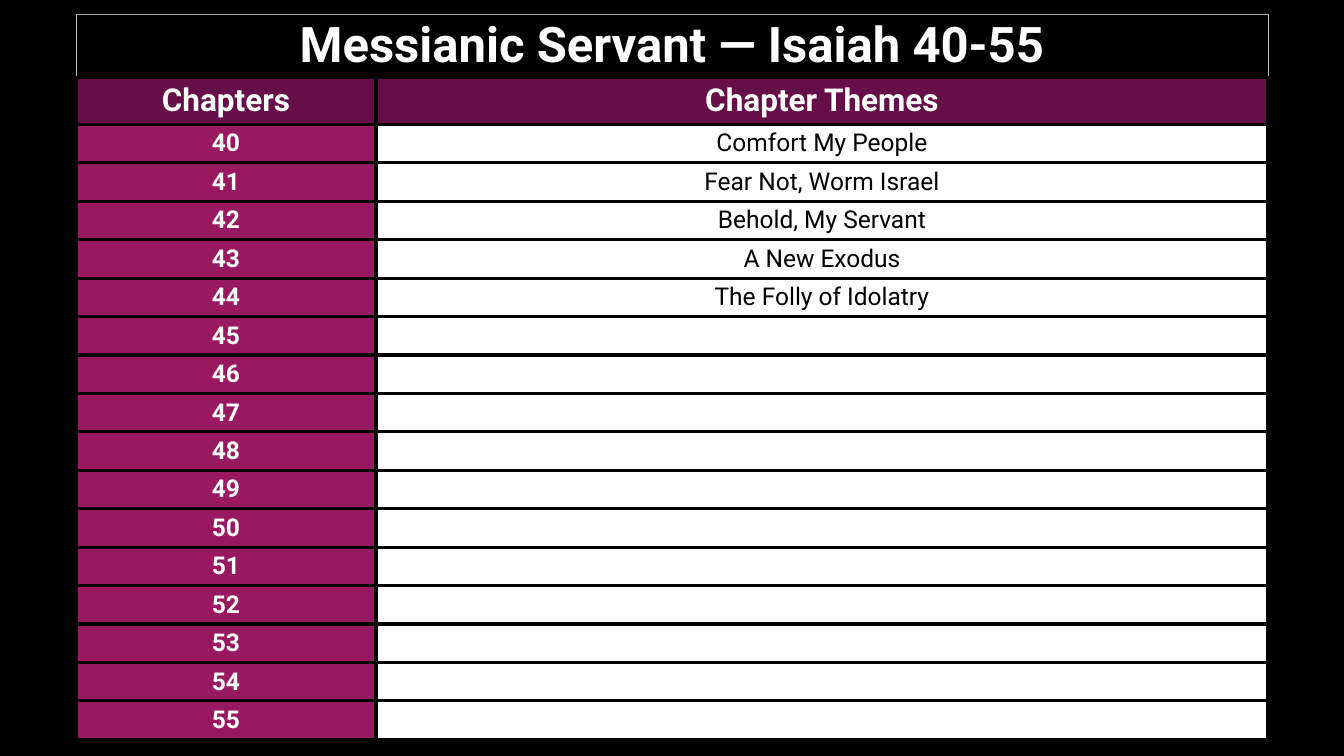
from lxml import etree
from pptx import Presentation
from pptx import util as u
from pptx.dml.color import RGBColor
from pptx.enum import text
from pptx.oxml.ns import qn

PX = 18143  # EMU in one px
FONT = "Roboto"
BLACK = RGBColor(0x00, 0x00, 0x00)
WHITE = RGBColor(0xFF, 0xFF, 0xFF)
PLUM = RGBColor(0x65, 0x0E, 0x48)
MAGENTA = RGBColor(0x98, 0x19, 0x5F)
SILVER = RGBColor(0xC0, 0xC0, 0xC0)
GREY = RGBColor(0xA6, 0xAA, 0xA9)

TITLE = "Messianic Servant — Isaiah 40-55"
HEADINGS = ["Chapters", "Chapter Themes"]
CHAPTERS = range(40, 56)
THEMES = {
    40: "Comfort My People",
    41: "Fear Not, Worm Israel",
    42: "Behold, My Servant",
    43: "A New Exodus",
    44: "The Folly of Idolatry",
}

GRID = {side: (BLACK, 5) for side in "LRTB"}
TITLE_EDGES = {"L": (SILVER, 1), "R": (SILVER, 1), "T": (GREY, 1), "B": (BLACK, 5)}


def set_borders(cell, edges):
    """Draw the cell's edges; call before the fill is set."""
    properties = cell._tc.get_or_add_tcPr()
    for side, (color, points) in edges.items():
        line = etree.SubElement(properties, qn(f"a:ln{side}"), w=str(u.Pt(points)))
        fill = etree.SubElement(line, qn("a:solidFill"))
        etree.SubElement(fill, qn("a:srgbClr"), val=str(color))


def format_cell(cell, fill, edges=GRID):
    set_borders(cell, edges)
    if fill is None:
        cell.fill.background()
    else:
        cell.fill.solid()
        cell.fill.fore_color.rgb = fill
    cell.vertical_anchor = text.MSO_ANCHOR.MIDDLE
    cell.margin_left = cell.margin_right = 3 * PX
    cell.margin_top = cell.margin_bottom = 3 * PX


def write_cell(cell, words, size, color=WHITE, bold=True):
    paragraph = cell.text_frame.paragraphs[0]
    paragraph.alignment = text.PP_ALIGN.CENTER
    run = paragraph.add_run()
    run.text = words
    run.font.name = FONT
    run.font.size = u.Pt(size)
    run.font.bold = bold
    run.font.color.rgb = color


def add_chapter_table(slide, left, top, width, height):
    title_height, heading_height, chapter_width = 63, 47, 300
    body_height = height - title_height - heading_height
    frame = slide.shapes.add_table(
        len(CHAPTERS) + 2, 2, left * PX, top * PX, width * PX, height * PX)
    table = frame.table
    table.first_row = table.horz_banding = False
    table.columns[0].width = chapter_width * PX
    table.columns[1].width = (width - chapter_width) * PX
    for row in table.rows:
        row.height = body_height * PX // len(CHAPTERS)
    table.rows[0].height = title_height * PX
    table.rows[1].height = heading_height * PX

    table.cell(0, 0).merge(table.cell(0, 1))
    for column in range(2):
        format_cell(table.cell(0, column), None, TITLE_EDGES)
    write_cell(table.cell(0, 0), TITLE, 70)

    for column, heading in enumerate(HEADINGS):
        format_cell(table.cell(1, column), PLUM)
        write_cell(table.cell(1, column), heading, 45)

    for row, chapter in enumerate(CHAPTERS, start=2):
        chapter_cell, theme_cell = table.cell(row, 0), table.cell(row, 1)
        format_cell(chapter_cell, MAGENTA)
        write_cell(chapter_cell, str(chapter), 35)
        format_cell(theme_cell, WHITE)
        if chapter in THEMES:
            write_cell(theme_cell, THEMES[chapter], 35, BLACK, bold=False)


def main():
    presentation = Presentation()
    presentation.slide_width = 1344 * PX
    presentation.slide_height = 756 * PX
    slide = presentation.slides.add_slide(presentation.slide_layouts[6])
    slide.background.fill.solid()
    slide.background.fill.fore_color.rgb = BLACK
    add_chapter_table(slide, 76, 14, 1192, 725)
    presentation.save("out.pptx")


if __name__ == "__main__":
    main()
